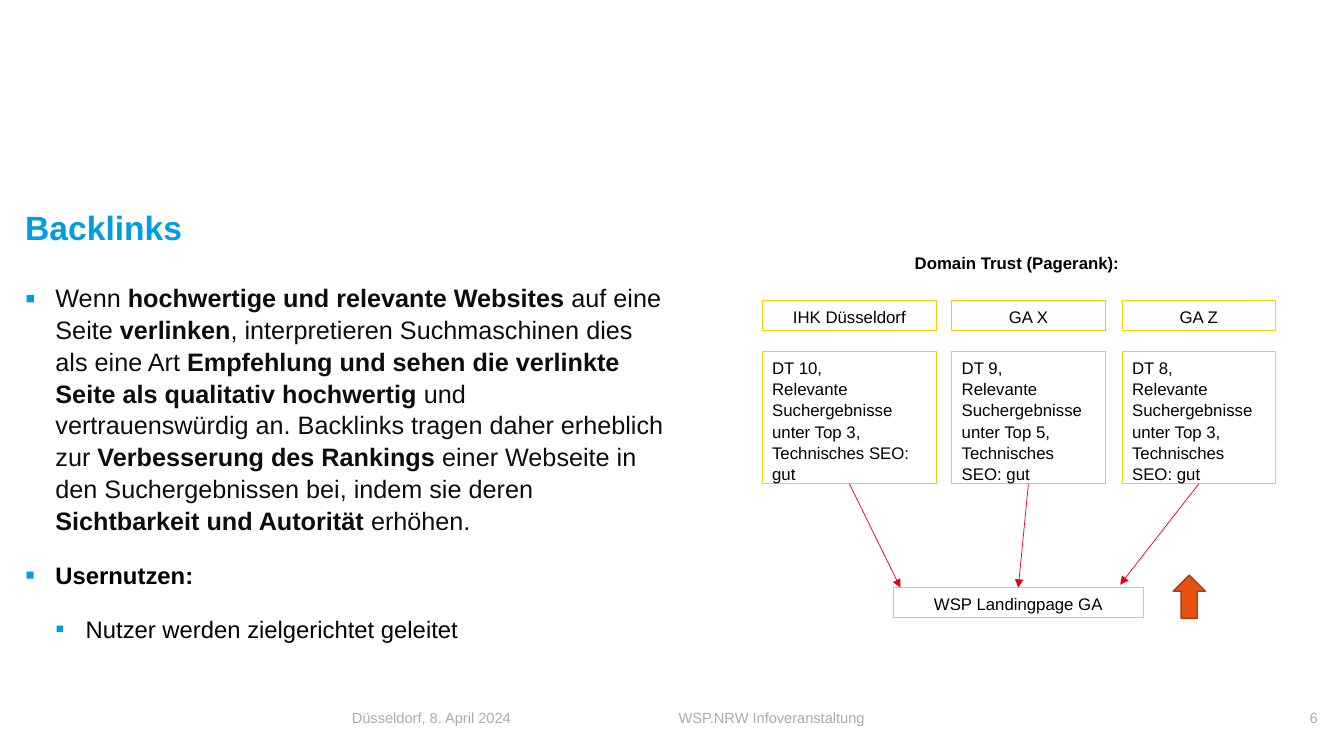
import pptx
import pptx.util
import pptx.dml.color
import pptx.enum.shapes
import pptx.enum.text
import pptx.oxml
import pptx.oxml.ns

Inches, Pt = pptx.util.Inches, pptx.util.Pt
SHAPE = pptx.enum.shapes.MSO_SHAPE
ALIGN = pptx.enum.text.PP_ALIGN
ANCHOR = pptx.enum.text.MSO_ANCHOR

# Content
COLORS = {"blue": "009EE0", "body": "0D0D0D", "black": "000000", "grey": "ACACAC",
          "yellow": "FFCC00", "amber": "FFC000", "red": "E2001A",
          "orange": "E75112", "rust": "AB3C0D"}
TITLE = "Backlinks"
# Body paragraphs: level, size, colour, bullet size in percent, (text, bold) runs
BODY = [
    (0, 18, "body", 120, [
        ("Wenn ", False), ("hochwertige und relevante Websites ", True),
        ("auf eine Seite ", False), ("verlinken", True),
        (", interpretieren Suchmaschinen dies als eine Art ", False),
        ("Empfehlung und sehen die verlinkte Seite als qualitativ hochwertig", True),
        (" und vertrauenswürdig an. Backlinks tragen daher erheblich zur ", False),
        ("Verbesserung des Rankings ", True),
        ("einer Webseite in den Suchergebnissen bei, indem sie deren ", False),
        ("Sichtbarkeit und Autorität ", True), ("erhöhen.", False)]),
    (0, 17, "black", 120, [("Usernutzen:", True)]),
    (1, 17, "black", 110, [("Nutzer werden zielgerichtet geleitet", False)]),
]
DIAGRAM_TITLE = "Domain Trust (Pagerank): "
DETAIL = "Relevante Suchergebnisse unter Top {}, Technisches SEO: gut"
# Linking sites: name, trust, top rank, left, width, border, arrow end
SITES = [
    ("IHK Düsseldorf", 10, 3, 7.56, 1.73, "yellow", (8.93, 5.83)),
    ("GA X", 9, 5, 9.44, 1.52, "amber", None),
    ("GA Z", 8, 3, 11.13, 1.52, "yellow", (11.11, 5.8)),
]
LANDING = "WSP Landingpage GA"
FOOTER = [("Düsseldorf, 8. April 2024", 3.49, ALIGN.LEFT),
          ("WSP.NRW Infoveranstaltung", 6.73, ALIGN.LEFT),
          ("6", 9.97, ALIGN.RIGHT)]

# Layout
NAME_TOP, DETAIL_TOP, LANDING_TOP = 2.98, 3.49, 5.83
ROW_H, DETAIL_H = 0.3, 1.31
INDENT = 0.3
LINE_SPACING = 1.05


def rgb(name):
    return pptx.dml.color.RGBColor.from_string(COLORS[name])


def add_run(p, text, size, color, bold=False):
    r = p.add_run()
    r.text = text
    for key, value in {"name": "Arial", "size": Pt(size), "bold": bold}.items():
        setattr(r.font, key, value)
    r.font.color.rgb = rgb(color)


def set_frame(tf, anchor, inset):
    margins = {"margin_left": inset, "margin_right": inset,
               "margin_top": inset / 2, "margin_bottom": inset / 2}
    for key, value in margins.items():
        setattr(tf, key, Inches(value))
    tf.word_wrap = True
    tf.vertical_anchor = anchor


def write(tf, lines, size, color, align=ALIGN.LEFT, bold=False):
    for i, line in enumerate(lines):
        p = tf.add_paragraph() if i else tf.paragraphs[0]
        p.alignment, p.line_spacing = align, LINE_SPACING
        add_run(p, line, size, color, bold)


def add_text(box, anchor=ANCHOR.TOP, inset=0):
    sp = slide.shapes.add_textbox(*map(Inches, box))
    set_frame(sp.text_frame, anchor, inset)
    return sp.text_frame


def add_box(box, lines, border, align):
    sp = slide.shapes.add_shape(SHAPE.RECTANGLE, *map(Inches, box))
    sp.shadow.inherit = False
    sp.fill.background()
    sp.line.color.rgb = rgb(border)
    sp.line.width = Pt(0.75)
    set_frame(sp.text_frame, ANCHOR.TOP, 0.1)
    write(sp.text_frame, lines, 12, "black", align)
    return sp


def add_bullet(p, level, percent):
    pPr = p._p.get_or_add_pPr()
    pPr.set("marL", str(Inches(INDENT * (level + 1))))
    pPr.set("indent", str(-Inches(INDENT)))
    ns = pptx.oxml.ns.nsdecls("a")
    for xml in (f'<a:buClr {ns}><a:srgbClr val="{COLORS["blue"]}"/></a:buClr>',
                f'<a:buSzPct {ns} val="{percent * 1000}"/>',
                f'<a:buFont {ns} typeface="Arial"/>',
                f'<a:buChar {ns} char="▪"/>'):
        pPr.append(pptx.oxml.parse_xml(xml))


def add_arrow(source, target, end):
    x, y = map(Inches, end or (0, 0))
    cxn = slide.shapes.add_connector(pptx.enum.shapes.MSO_CONNECTOR.STRAIGHT, 0, 0, x, y)
    cxn.begin_connect(source, 2)
    if end is None:
        cxn.end_connect(target, 0)
    cxn.line.color.rgb = rgb("red")
    cxn.line.width = Pt(0.5)
    ns = pptx.oxml.ns.nsdecls("a")
    cxn.line._get_or_add_ln().append(
        pptx.oxml.parse_xml(f'<a:tailEnd {ns} type="triangle"/>'))
    cxn._element.spPr.append(pptx.oxml.parse_xml(f"<a:effectLst {ns}/>"))


prs = pptx.Presentation()
prs.slide_width, prs.slide_height = Inches(13.33), Inches(7.5)
slide = prs.slides.add_slide(prs.slide_layouts[6])

# Title
write(add_text((0.25, 1.15, 12.83, 1.3), ANCHOR.BOTTOM), [TITLE], 24, "blue", bold=True)

# Body text
tf = add_text((0.25, 2.79, 6.35, 3.95))
for i, (level, size, color, percent, runs) in enumerate(BODY):
    p = tf.add_paragraph() if i else tf.paragraphs[0]
    p.level, p.line_spacing, p.space_after = level, LINE_SPACING, Pt(17)
    add_bullet(p, level, percent)
    for text, bold in runs:
        add_run(p, text, size, color, bold)

# Footer
for text, left, align in FOOTER:
    write(add_text((left, 6.99, 3.1, 0.25), ANCHOR.MIDDLE), [text], 10.5, "grey", align)

# Diagram: sites linking to the landing page
write(add_text((7.56, 2.45, 5.1, ROW_H), inset=0.1), [DIAGRAM_TITLE], 12, "black",
      ALIGN.CENTER, True)
landing = add_box((8.86, LANDING_TOP, 2.48, ROW_H), [LANDING], "yellow", ALIGN.CENTER)
for name, trust, rank, left, width, border, end in SITES:
    add_box((left, NAME_TOP, width, ROW_H), [name], border, ALIGN.CENTER)
    detail = add_box((left, DETAIL_TOP, width, DETAIL_H),
                     [f"DT {trust},", DETAIL.format(rank)], "yellow", ALIGN.LEFT)
    add_arrow(detail, landing, end)

# Rising rank arrow
rise = slide.shapes.add_shape(SHAPE.RIGHT_ARROW, *map(Inches, (11.58, 5.76, 0.43, 0.32)))
rise.rotation = 270
rise.shadow.inherit = False
rise.fill.solid()
rise.fill.fore_color.rgb = rgb("orange")
rise.line.color.rgb = rgb("rust")
rise.line.width = Pt(1)

prs.save("out.pptx")
